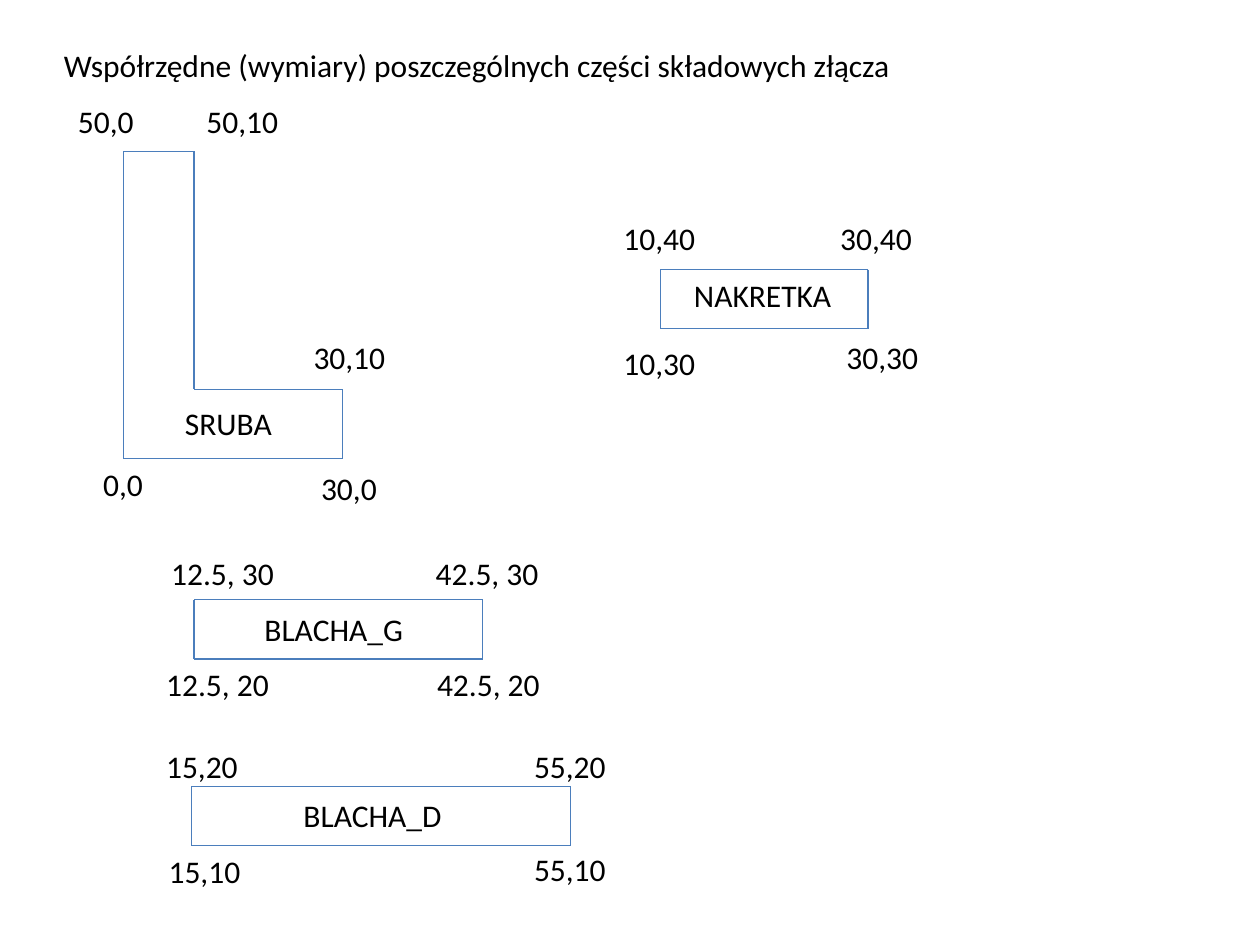
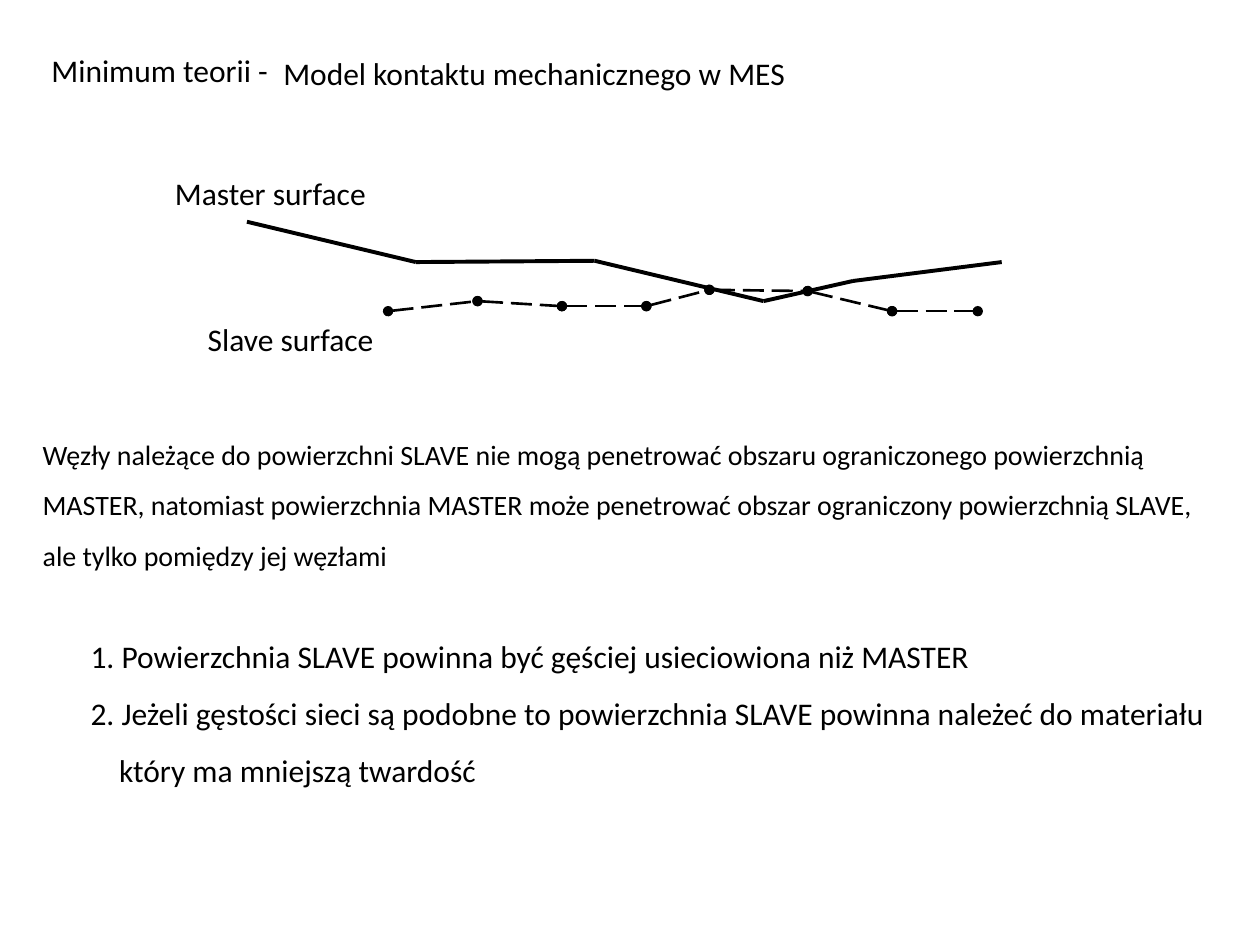
from dataclasses import dataclass
from itertools import pairwise
from typing import NamedTuple

from lxml import etree
from pptx import Presentation
from pptx import util as u
from pptx.dml.color import RGBColor
from pptx.enum import dml, shapes, text
from pptx.oxml.ns import qn

# Grid: 100 columns by 75 rows
DECK_WIDTH, DECK_HEIGHT = u.Inches(10), u.Inches(7.5)
COLUMN, ROW = DECK_WIDTH / 100, DECK_HEIGHT / 75
LABEL_ROWS = 4


@dataclass(frozen=True)
class Theme:
    font: str = "Calibri"
    ink: RGBColor = RGBColor(0x00, 0x00, 0x00)
    outline: RGBColor = RGBColor(0x4B, 0x7E, 0xBC)
    label_size: float = 18
    body_size: float = 16
    body_spacing: float = 1.5
    outline_width: float = 0.75
    master_width: float = 2.25
    slave_width: float = 1.5


THEME = Theme()


class Point(NamedTuple):
    column: float
    row: float


class Label(NamedTuple):
    text: str
    column: float
    row: float
    columns: float


class Line(NamedTuple):
    text: str
    spacing: float = 1.0
    indent: float = 0


@dataclass(frozen=True)
class Stroke:
    color: RGBColor
    width: float
    dashed_nodes: bool = False


@dataclass(frozen=True)
class Part:
    corners: list[Point]
    name: Label
    coordinates: list[Label]


def coordinate(caption: str, column: float, row: float) -> Label:
    """Size a coordinate label from its digits and separators."""
    digits = sum(sign.isdigit() for sign in caption)
    return Label(caption, column, row, 2 + 1.27 * digits + 0.63 * (len(caption) - digits))


def rectangle(left: float, top: float, right: float, bottom: float) -> list[Point]:
    return [Point(left, top), Point(right, top), Point(right, bottom), Point(left, bottom)]


def add_lines(page, lines: list[Line], column: float, row: float,
              columns: float, rows: float, size: float) -> None:
    box = page.shapes.add_textbox(round(column * COLUMN), round(row * ROW),
                                  round(columns * COLUMN), round(rows * ROW))
    frame = box.text_frame
    frame.word_wrap = False
    frame.auto_size = text.MSO_AUTO_SIZE.SHAPE_TO_FIT_TEXT
    frame.text = "\n".join(line.text for line in lines)
    for para, line in zip(frame.paragraphs, lines):
        para.line_spacing = line.spacing
        if line.indent:
            para._p.get_or_add_pPr().set("marL", str(round(line.indent * COLUMN)))
        for span in para.runs:
            span.font.name = THEME.font
            span.font.size = u.Pt(size)
            span.font.color.rgb = THEME.ink


def add_label(page, label: Label) -> None:
    add_lines(page, [Line(label.text)], label.column, label.row,
              label.columns, LABEL_ROWS, THEME.label_size)


def add_polyline(page, points: list[Point], stroke: Stroke) -> None:
    for start, end in pairwise(points):
        segment = page.shapes.add_connector(
            shapes.MSO_CONNECTOR.STRAIGHT,
            round(start.column * COLUMN), round(start.row * ROW),
            round(end.column * COLUMN), round(end.row * ROW))
        segment.line.color.rgb = stroke.color
        segment.line.width = u.Pt(stroke.width)
        properties = segment._element.spPr
        if stroke.dashed_nodes:
            segment.line.dash_style = dml.MSO_LINE.LONG_DASH
            for tag in ("a:headEnd", "a:tailEnd"):
                etree.SubElement(properties.find(qn("a:ln")), qn(tag), type="oval")
        etree.SubElement(properties, qn("a:effectLst"))


# Slide 1: joint parts and their corner coordinates
PARTS_TITLE = Label("Współrzędne (wymiary) poszczególnych części składowych złącza",
                    4.1, 3.2, 68.3)
PARTS = [
    Part([Point(9.8, 12), Point(15.4, 12), Point(15.4, 30.9),
          Point(27.2, 30.9), Point(27.2, 36.4), Point(9.8, 36.4)],
         Label("SRUBA", 13.7, 31.6, 9),
         [coordinate("0,0", 7.2, 36.4), coordinate("30,0", 24.5, 36.7),
          coordinate("50,0", 5.2, 7.6), coordinate("30,10", 23.9, 26.3),
          coordinate("50,10", 15.4, 7.6)]),
    Part(rectangle(52.4, 21.4, 68.9, 26.1),
         Label("NAKRETKA", 54.1, 21.4, 13),
         [coordinate("10,30", 48.5, 26.8), coordinate("30,30", 66.2, 26.3),
          coordinate("10,40", 48.5, 16.9), coordinate("30,40", 65.7, 16.9)]),
    Part(rectangle(15.4, 47.6, 38.3, 52.3),
         Label("BLACHA_G", 20, 47.9, 13.1),
         [coordinate("12.5, 20", 12.2, 52.3), coordinate("42.5, 20", 33.7, 52.3),
          coordinate("12.5, 30", 12.6, 43.5), coordinate("42.5, 30", 33.6, 43.5)]),
    Part(rectangle(15.2, 62.4, 45.3, 67.1),
         Label("BLACHA_D", 23.1, 62.7, 13.1),
         [coordinate("15,10", 12.4, 67.1), coordinate("55,10", 41.4, 67),
          coordinate("15,20", 12.2, 58.8), coordinate("55,20", 41.4, 58.8)]),
]

# Slide 2: contact between two surfaces
CONTACT_LABELS = [
    Label("Minimum teorii -", 3.1, 3.6, 20),
    Label("Model kontaktu mechanicznego w MES", 21.5, 3.8, 42.3),
    Label("Master surface", 12.9, 13.3, 17.3),
    Label("Slave surface", 15.5, 24.9, 15.3),
]
MASTER_SURFACE = [Point(19.6, 17.6), Point(33, 20.8), Point(47.2, 20.7),
                  Point(60.6, 23.9), Point(67.7, 22.3), Point(79.5, 20.8)]
SLAVE_SURFACE = [Point(30.8, 24.7), Point(37.9, 23.9), Point(44.6, 24.3),
                 Point(51.3, 24.3), Point(56.3, 23), Point(64.1, 23.1),
                 Point(70.8, 24.7), Point(77.6, 24.7)]
PENETRATION_RULE = [
    Line("Węzły należące do powierzchni SLAVE nie mogą penetrować obszaru "
         "ograniczonego powierzchnią", THEME.body_spacing),
    Line("MASTER, natomiast powierzchnia MASTER może penetrować obszar "
         "ograniczony powierzchnią SLAVE,", THEME.body_spacing),
    Line("ale tylko pomiędzy jej węzłami", THEME.body_spacing),
]
MESH_RULES = [
    Line("1. Powierzchnia SLAVE powinna być gęściej usieciowiona niż MASTER"),
    Line("2. Jeżeli gęstości sieci są podobne to powierzchnia SLAVE powinna "
         "należeć do materiału", THEME.body_spacing),
    Line("który ma mniejszą twardość", THEME.body_spacing, indent=2.26),
]


def draw_parts(page) -> None:
    stroke = Stroke(THEME.outline, THEME.outline_width)
    add_label(page, PARTS_TITLE)
    for part in PARTS:
        add_polyline(page, [*part.corners, part.corners[0]], stroke)
        for label in (part.name, *part.coordinates):
            add_label(page, label)


def draw_contact(page) -> None:
    add_polyline(page, MASTER_SURFACE, Stroke(THEME.ink, THEME.master_width))
    add_polyline(page, SLAVE_SURFACE, Stroke(THEME.ink, THEME.slave_width, dashed_nodes=True))
    for label in CONTACT_LABELS:
        add_label(page, label)
    add_lines(page, PENETRATION_RULE, 2.4, 32.9, 94.5, 13.1, THEME.body_size)
    add_lines(page, MESH_RULES, 6.2, 50.1, 91.5, 13.1, THEME.label_size)


def main() -> None:
    deck = Presentation()
    deck.slide_width, deck.slide_height = DECK_WIDTH, DECK_HEIGHT
    blank = deck.slide_layouts[6]
    for draw in (draw_parts, draw_contact):
        draw(deck.slides.add_slide(blank))
    deck.save("out.pptx")


if __name__ == "__main__":
    main()
